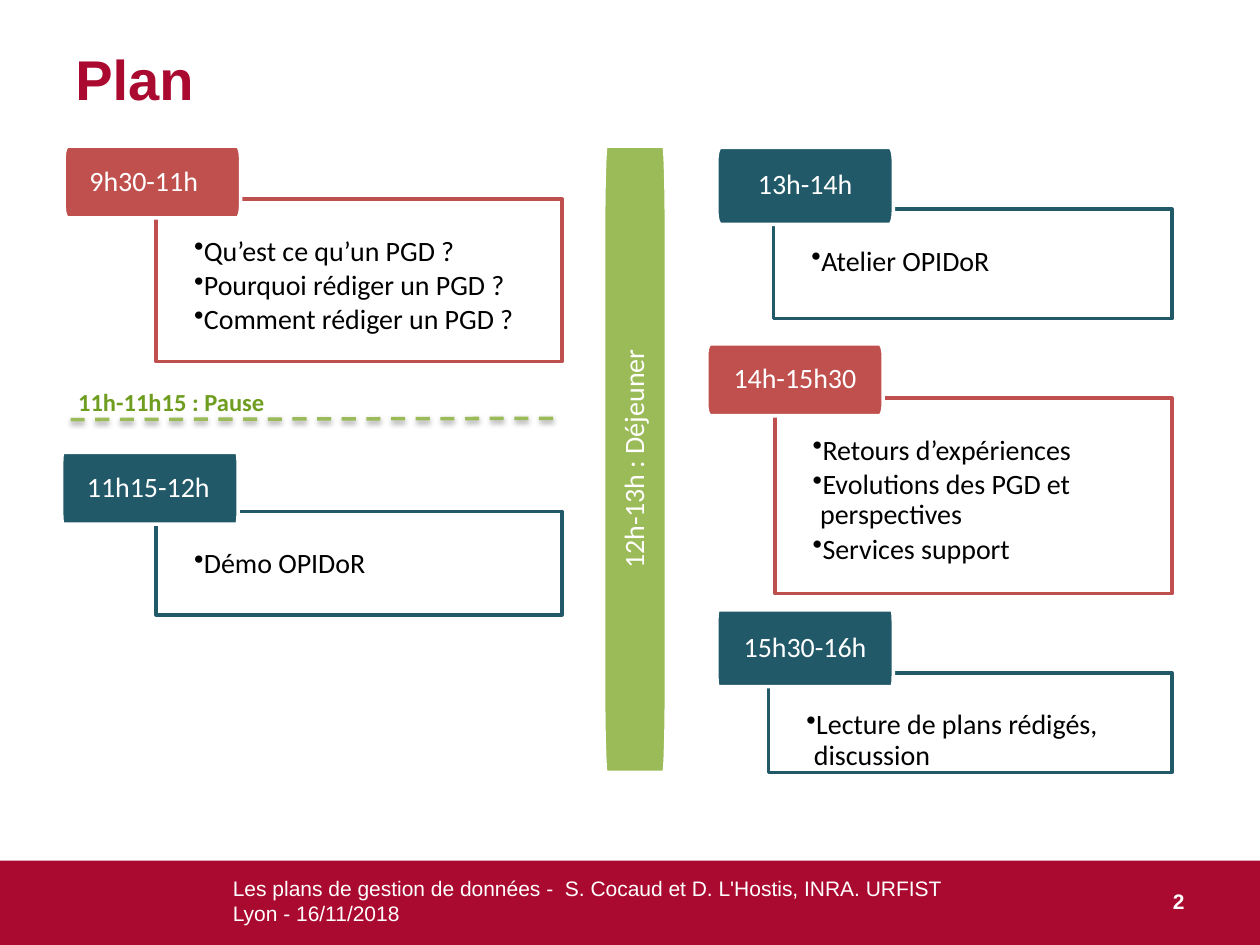
import math
from lxml import etree
from pptx import Presentation
from pptx.dml.color import RGBColor
from pptx.enum import dml, shapes, text
from pptx.oxml import ns
from pptx.util import Inches, Pt

RED, TEAL, GREEN, WHITE = "C0504D", "215968", "9BBB59", "FFFFFF"
CRIMSON, LEAF, BLACK = "AA0A2F", "6F9D20", "000000"
LEFT, CENTER, RIGHT = text.PP_ALIGN.LEFT, text.PP_ALIGN.CENTER, text.PP_ALIGN.RIGHT
TOP, MIDDLE = text.MSO_ANCHOR.TOP, text.MSO_ANCHOR.MIDDLE

TITLE = "Plan"
FOOTER = "Les plans de gestion de données -  S. Cocaud et D. L'Hostis, INRA. URFIST Lyon - 16/11/2018"
PAGE = "2"
LUNCH = "12h-13h : Déjeuner"
BREAK = "11h-11h15 : Pause"

SESSIONS = [
    ("9h30-11h", RED, LEFT, (0.51, 1.16, 1.4, 0.57), 0.03, (1.24, 1.58, 3.22, 1.29),
     ["Qu’est ce qu’un PGD ?", "Pourquoi rédiger un PGD ?", "Comment rédiger un PGD ?"]),
    ("11h15-12h", TEAL, LEFT, (0.49, 3.59, 1.4, 0.57), 0.01, (1.24, 4.06, 3.22, 0.82),
     ["Démo OPIDoR"]),
    ("13h-14h", TEAL, CENTER, (5.69, 1.17, 1.4, 0.61), 0.03, (6.14, 1.66, 3.16, 0.87),
     ["Atelier OPIDoR"]),
    ("14h-15h30", RED, CENTER, (5.61, 2.73, 1.4, 0.57), 0.03, (6.15, 3.16, 3.15, 1.55),
     ["Retours d’expériences", "Evolutions des PGD et perspectives", "Services support"]),
    ("15h30-16h", TEAL, CENTER, (5.69, 4.84, 1.4, 0.61), 0.01, (6.1, 5.34, 3.2, 0.79),
     ["Lecture de plans rédigés, discussion"]),
]

prs = Presentation()
prs.slide_width, prs.slide_height = Inches(10), Inches(7.5)
slide = prs.slides.add_slide(prs.slide_layouts[6])


def rgb(value):
    return RGBColor.from_string(value)


def child(parent, tag, **attributes):
    return etree.SubElement(parent, ns.qn(tag), attributes)


def add_shadow(item, distance, opacity):
    props = item._element.spPr
    for old in props.findall(ns.qn("a:effectLst")):
        props.remove(old)
    outer = child(child(props, "a:effectLst"), "a:outerShdw", blurRad=str(Pt(3.1)),
                  dist=str(Pt(distance)), dir="5400000", rotWithShape="0")
    child(child(outer, "a:srgbClr", val=BLACK), "a:alpha", val=str(opacity * 1000))


def write(item, lines, size, color, font="Calibri", bold=False, align=LEFT, anchor=MIDDLE,
          insets=(0.1, 0.05, 0.1, 0.05), spacing=0.9, bullets=False):
    frame = item.text_frame
    frame.word_wrap = True
    frame.vertical_anchor = anchor
    frame.margin_left, frame.margin_top, frame.margin_right, frame.margin_bottom = map(Inches, insets)
    for index, line in enumerate(lines):
        paragraph = frame.paragraphs[0] if index == 0 else frame.add_paragraph()
        paragraph.text = line
        paragraph.alignment = align
        paragraph.line_spacing = spacing
        if bullets:
            paragraph.space_after = Pt(2.4)
            props = paragraph._p.get_or_add_pPr()
            props.set("marL", str(Inches(0.06)))
            props.set("indent", str(-Inches(0.06)))
            child(props, "a:buChar", char="•")
        paragraph.font.name = font
        paragraph.font.size = Pt(size)
        paragraph.font.bold = bold
        paragraph.font.color.rgb = rgb(color)


def add_label(box, lines, size, **style):
    label = slide.shapes.add_textbox(*map(Inches, box))
    write(label, lines, size, font="Arial", spacing=1, **style)


def corner_points(box, rx):
    left, top, width, height = box
    ry = height / 6
    corners = [(left + width - rx, top + ry, 270), (left + width - rx, top + height - ry, 0),
               (left + rx, top + height - ry, 90), (left + rx, top + ry, 180)]
    return [(x + rx * math.cos(math.radians(start + step)), y + ry * math.sin(math.radians(start + step)))
            for x, y, start in corners for step in range(0, 91, 10)]


def add_outline(points, fill, line):
    emu = [(Inches(x), Inches(y)) for x, y in points]
    builder = slide.shapes.build_freeform(*emu[0])
    builder.add_line_segments(emu[1:], close=True)
    shape = builder.convert_to_shape()
    shape.shadow.inherit = False
    shape.fill.solid()
    shape.fill.fore_color.rgb = rgb(fill)
    shape.line.color.rgb = rgb(line)
    shape.line.width = Pt(2)
    return shape


def add_tab(box, rx, fill, caption, side=0.2, size=16, color=WHITE, **style):
    tab = add_outline(corner_points(box, rx), fill, WHITE)
    write(tab, [caption], size, color, insets=(side, 0.01, side, 0.01), **style)
    return tab


def add_session(hours, color, align, tab_box, rx, box, topics):
    left, top, width, height = box
    right, bottom = left + width, top + height
    panel = add_outline([(left, top), (right, top), (right, bottom), (left, bottom)], WHITE, color)
    fill_color = panel._element.spPr.find(ns.qn("a:solidFill"))[0]
    child(fill_color, "a:alpha", val="90000")
    write(panel, topics, 16, BLACK, anchor=TOP, insets=(0.3, 0.3, 0.3, 0.07), bullets=True)
    add_tab(tab_box, rx, color, hours, align=align)


band = slide.shapes.add_shape(shapes.MSO_SHAPE.RECTANGLE, *map(Inches, (0, 6.83, 10, 0.69)))
band.fill.solid()
band.fill.fore_color.rgb = rgb(CRIMSON)
band.line.fill.background()
add_shadow(band, 1.8, 35)

add_label((0.5, 0.3, 9, 1.25), [TITLE], 32, color=CRIMSON, bold=True, anchor=TOP)
add_label((1.75, 6.95, 6.07, 0.4), [FOOTER], 12, color=WHITE)
add_label((8.85, 6.95, 0.65, 0.4), [PAGE], 12, color=WHITE, bold=True, align=RIGHT)

for session in SESSIONS:
    add_session(*session)

lunch = add_tab((4.79, 1.16, 0.5, 4.97), 0.02, GREEN, LUNCH, side=0.25, align=CENTER)
lunch.text_frame._txBody.bodyPr.set("vert", "vert270")

add_tab((0.37, 2.99, 2.05, 0.43), 0.05, WHITE, BREAK, side=0.25, size=14, color=LEAF, bold=True)
break_line = slide.shapes.add_connector(
    shapes.MSO_CONNECTOR.STRAIGHT, *map(Inches, (0.56, 3.33, 4.45, 3.32)))
break_line.line.color.rgb = rgb(GREEN)
break_line.line.width = Pt(2)
break_line.line.dash_style = dml.MSO_LINE.DASH
add_shadow(break_line, 1.6, 38)

prs.save("out.pptx")
